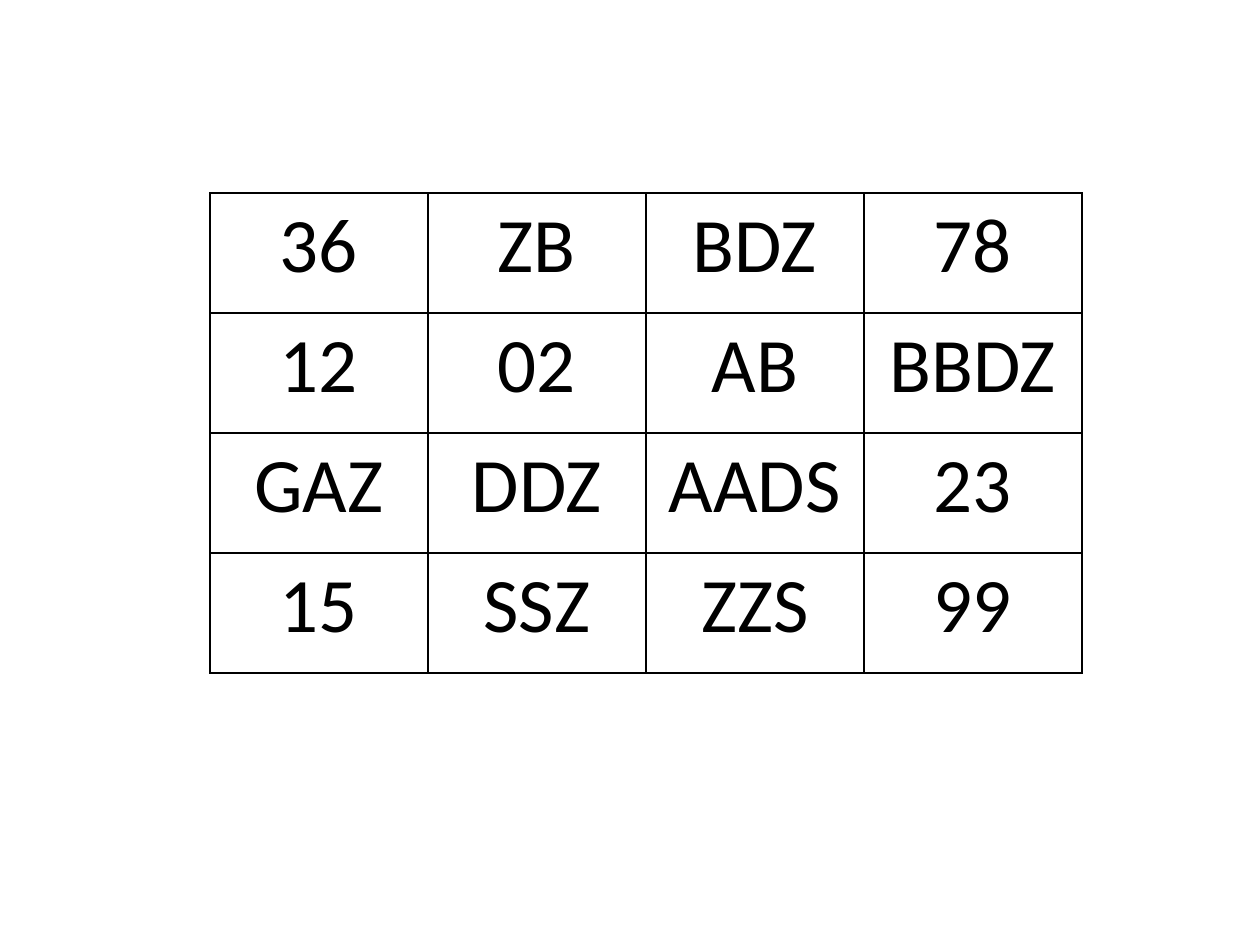
from dataclasses import dataclass

from lxml.etree import SubElement
from pptx import Presentation
from pptx.dml.color import RGBColor
from pptx.enum.text import MSO_ANCHOR, PP_ALIGN
from pptx.oxml.ns import qn
from pptx.slide import Slide
from pptx.table import _Cell
from pptx.util import Emu, Pt

PX = 914400 // 126
COLORS = {"ink": "000000", "paper": "FFFFFF"}
FONT = "Calibri"
FONT_SIZE = 44
BORDER_PT = 1


@dataclass(frozen=True)
class CodeGrid:
    left: int
    top: int
    col_width: int
    row_height: int
    rows: tuple[tuple[str, ...], ...]


GRID = CodeGrid(
    left=210,
    top=193,
    col_width=218,
    row_height=120,
    rows=(
        ("36", "ZB", "BDZ", "78"),
        ("12", "02", "AB", "BBDZ"),
        ("GAZ", "DDZ", "AADS", "23"),
        ("15", "SSZ", "ZZS", "99"),
    ),
)


def px(n: int) -> Emu:
    return Emu(n * PX)


def set_borders(cell: _Cell) -> None:
    tc_pr = cell._tc.get_or_add_tcPr()
    for i, side in enumerate(("lnL", "lnR", "lnT", "lnB")):
        ln = SubElement(tc_pr, qn(f"a:{side}"), w=str(Pt(BORDER_PT)))
        fill = SubElement(ln, qn("a:solidFill"))
        SubElement(fill, qn("a:srgbClr"), val=COLORS["ink"])
        tc_pr.insert(i, ln)


def fill_cell(cell: _Cell, text: str) -> None:
    cell.fill.background()
    cell.vertical_anchor = MSO_ANCHOR.TOP
    set_borders(cell)
    p = cell.text_frame.paragraphs[0]
    p.alignment = PP_ALIGN.CENTER
    r = p.add_run()
    r.text = text
    r.font.name = FONT
    r.font.size = Pt(FONT_SIZE)
    r.font.bold = False
    r.font.color.rgb = RGBColor.from_string(COLORS["ink"])


def draw_grid(s: Slide, grid: CodeGrid) -> None:
    n_rows, n_cols = len(grid.rows), len(grid.rows[0])
    table = s.shapes.add_table(
        n_rows, n_cols, px(grid.left), px(grid.top),
        px(n_cols * grid.col_width), px(n_rows * grid.row_height),
    ).table
    table.first_row = False
    table.horz_banding = False
    for col in table.columns:
        col.width = px(grid.col_width)
    for row, texts in zip(table.rows, grid.rows):
        row.height = px(grid.row_height)
        for cell, text in zip(row.cells, texts):
            fill_cell(cell, text)


def main() -> None:
    prs = Presentation()
    prs.slide_width = px(1260)
    prs.slide_height = px(945)
    s = prs.slides.add_slide(prs.slide_layouts[6])
    s.background.fill.solid()
    s.background.fill.fore_color.rgb = RGBColor.from_string(COLORS["paper"])
    draw_grid(s, GRID)
    prs.save("out.pptx")


if __name__ == "__main__":
    main()
